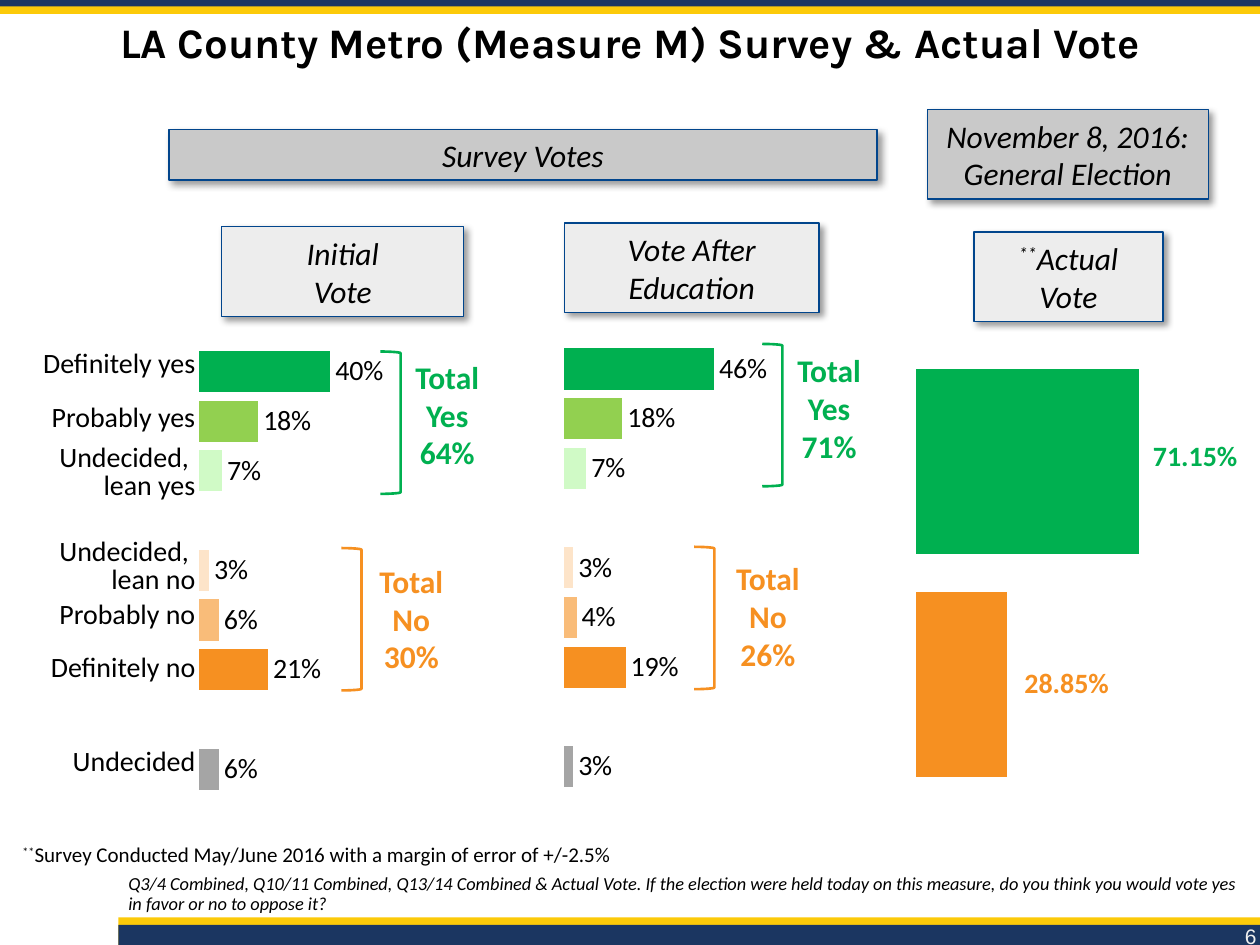
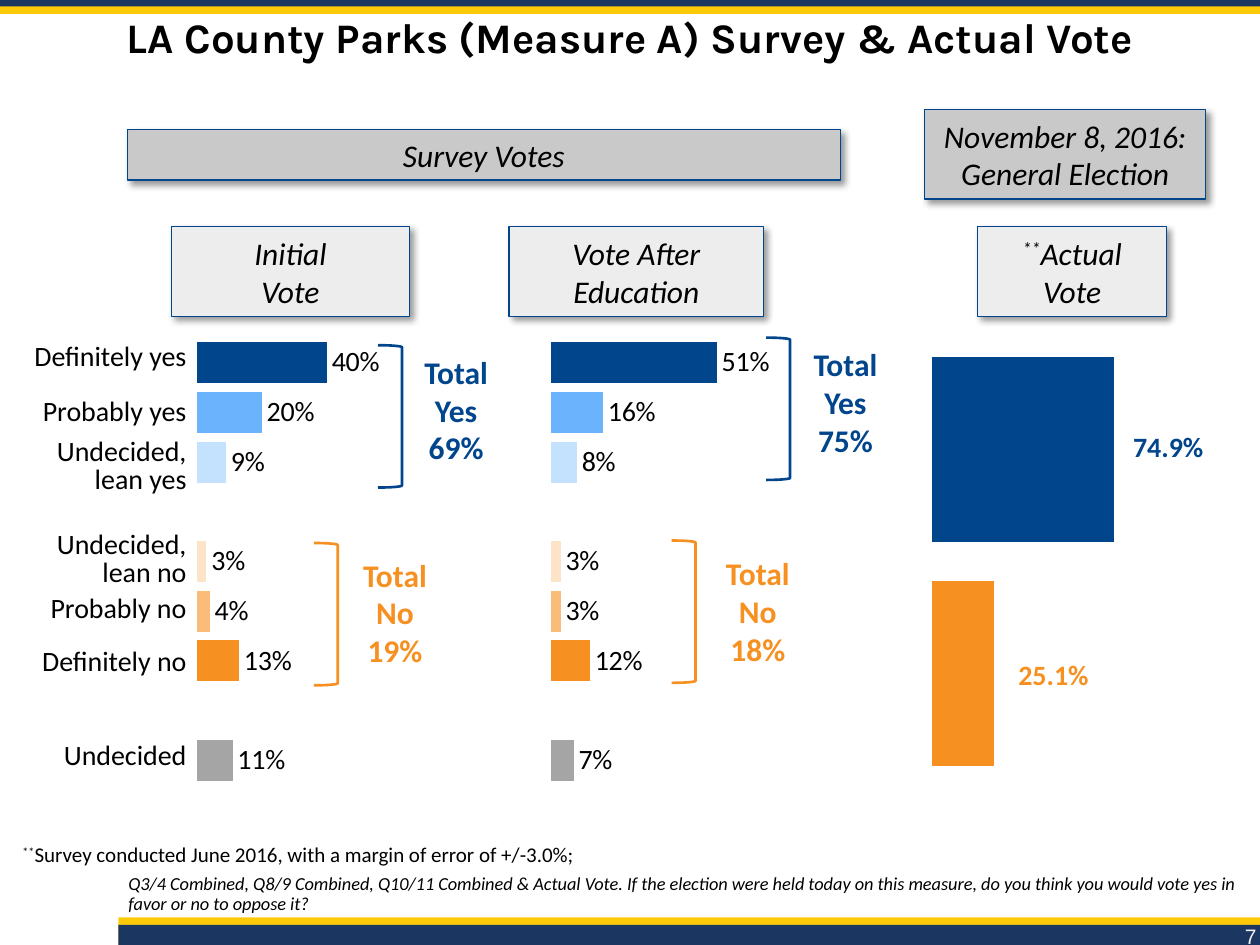
import pptx
import pptx.chart.data
import pptx.dml.color
import pptx.enum.chart
import pptx.enum.shapes
import pptx.enum.text
import pptx.oxml
import pptx.oxml.ns
import pptx.util
from lxml import etree

Inches = pptx.util.Inches
Pt = pptx.util.Pt
SHAPE = pptx.enum.shapes.MSO_SHAPE
ALIGN = pptx.enum.text.PP_ALIGN
ANCHOR = pptx.enum.text.MSO_ANCHOR

NAVY, GOLD, BLUE, GREEN, ORANGE = "1B3661", "FCCA09", "01458C", "00B050", "F69021"
BLACK, DARK_GRAY, LIGHT_GRAY, PAGE_GRAY = "000000", "C9C9C9", "EDEDED", "EFEFEF"
GREENS = [GREEN, "92D050", "D0FAC6"]
BLUES = [BLUE, "6CB3FD", "C4E1FE"]
NO_COLORS = ["FDE4C9", "F9BC79", ORANGE]
UNDECIDED_COLOR = "A5A5A5"

ANSWER_ROWS = [0.23, 0.43, 0.54, 0.29, 0.45, 0.28, 0.42, 0.29, 0.46]
CHART_HEIGHT = 4.04
BRACKET_HEIGHT = 1.13
TOTAL_HEIGHT = 1.01
HEADING_HEIGHT = 0.71


def color(hex_string):
    return pptx.dml.color.RGBColor.from_string(hex_string)


def inches(*lengths):
    return [Inches(length) for length in lengths]


class Deck:
    """Holds the presentation, its style and the slide being filled."""

    def __init__(self):
        self.prs = pptx.Presentation()
        self.prs.slide_width, self.prs.slide_height = inches(10, 7.5)
        self.s = None

    def new_slide(self, title, title_top, question, page):
        self.s = self.prs.slides.add_slide(self.prs.slide_layouts[6])
        self.band(0.94, 7.28, 9.06, 0.22, GOLD)
        self.band(0.94, 7.34, 9.06, 0.16, NAVY)
        self.text((9.08, 7.15, 0.99, 0.43), page, 12, PAGE_GRAY, font="Arial",
                  align=ALIGN.RIGHT, anchor=ANCHOR.BOTTOM)
        self.band(0, 0, 10, 0.11, GOLD)
        self.band(0, 0, 10, 0.05, NAVY)
        self.text((0, title_top, 10, 1.25), title, 24, font="Karla", bold=True,
                  align=ALIGN.CENTER, spacing=0.9)
        self.text((0.92, 6.71, 9.08, 0.6), question, 10.5, italic=True,
                  anchor=ANCHOR.BOTTOM, spacing=0.9)

    def set_text(self, tf, text, size, ink=BLACK, font="Calibri", bold=False,
                 italic=False, align=ALIGN.LEFT, spacing=None):
        """Fill a frame's paragraph; a leading ** is raised, a newline breaks the line."""
        p = tf.paragraphs[0]
        p.alignment = align
        if spacing:
            p.line_spacing = spacing
        f = p.font
        f.size, f.name, f.bold, f.italic = Pt(size), font, bold, italic
        f.color.rgb = color(ink)
        if text.startswith("**"):
            r = p.add_run()
            r.text = "**"
            r._r.get_or_add_rPr().set("baseline", "30000")
            text = text[2:]
        for i, line in enumerate(text.split("\n")):
            if i:
                p.add_line_break()
            if line:
                p.add_run().text = line

    def text(self, box, text, size, ink=BLACK, anchor=ANCHOR.TOP, **style):
        tf = self.s.shapes.add_textbox(*inches(*box)).text_frame
        tf.word_wrap = True
        tf.vertical_anchor = anchor
        self.set_text(tf, text, size, ink, **style)

    def shape(self, kind, box, fill=None, line=None, width=0.75):
        sp = self.s.shapes.add_shape(kind, *inches(*box))
        sp.shadow.inherit = False
        if fill:
            sp.fill.solid()
            sp.fill.fore_color.rgb = color(fill)
        else:
            sp.fill.background()
        if line:
            sp.line.color.rgb = color(line)
            sp.line.width = Pt(width)
        else:
            sp.line.fill.background()
        return sp

    def band(self, left, top, width, height, fill):
        self.shape(SHAPE.RECTANGLE, (left, top, width, height), fill)

    def heading(self, box, text, fill=LIGHT_GRAY):
        sp = self.shape(SHAPE.RECTANGLE, box, fill, BLUE)
        effects = sp._element.spPr.find(pptx.oxml.ns.qn("a:effectLst"))
        effects.append(pptx.oxml.parse_xml(
            f'<a:outerShdw {pptx.oxml.ns.nsdecls("a")} blurRad="{Pt(4)}" dist="{Pt(3)}" '
            'dir="2700000" algn="tl" rotWithShape="0">'
            '<a:srgbClr val="000000"><a:alpha val="40000"/></a:srgbClr></a:outerShdw>'))
        tf = sp.text_frame
        tf.word_wrap = True
        tf.vertical_anchor = ANCHOR.MIDDLE
        self.set_text(tf, text, 18, italic=True, align=ALIGN.CENTER)

    def total(self, bracket, label, label_width, text, ink):
        """Bracket as (left, top, width) and label as (left, top)."""
        self.text((*label, label_width, TOTAL_HEIGHT), text, 18, ink, bold=True,
                  align=ALIGN.CENTER)
        self.shape(SHAPE.RIGHT_BRACKET, (*bracket, BRACKET_HEIGHT), line=ink, width=1.5)

    def table(self, left, top, width, rows, texts, anchor, **style):
        """One column of unfilled, right-aligned cells."""
        frame = self.s.shapes.add_table(len(rows), 1, *inches(left, top, width, sum(rows)))
        table = frame.table
        table.first_row = table.horz_banding = False
        for i, (height, text) in enumerate(zip(rows, texts)):
            table.rows[i].height = Inches(height)
            cell = table.cell(i, 0)
            cell.fill.background()
            cell.margin_left = cell.margin_right = cell.margin_top = Inches(0.01)
            cell.margin_bottom = 0
            cell.vertical_anchor = anchor
            self.set_text(cell.text_frame, text, 16, align=ALIGN.RIGHT, **style)

    def bars(self, left, top, width, values, colors, scale, plot, labels=True):
        """Bar chart; scale is (maximum, major unit), plot the inner (x, width)."""
        data = pptx.chart.data.CategoryChartData(number_format="0%" if labels else "General")
        data.categories = [str(i + 1) for i in range(len(values))]
        data.add_series("Series 1", values)
        chart = self.s.shapes.add_chart(
            pptx.enum.chart.XL_CHART_TYPE.BAR_CLUSTERED,
            *inches(left, top, width, CHART_HEIGHT), data).chart
        chart.has_legend = chart.has_title = False
        chart.font.size, chart.font.name = Pt(10), "Calibri"
        chart.font.color.rgb = color(BLACK)

        cat, val = chart.category_axis, chart.value_axis
        cat.reverse_order = True
        cat.tick_label_position = pptx.enum.chart.XL_TICK_LABEL_POSITION.NONE
        cat.major_tick_mark = pptx.enum.chart.XL_TICK_MARK.NONE
        cat.format.line.fill.background()
        val.visible = val.has_major_gridlines = False
        val.minimum_scale = 0
        val.maximum_scale, val.major_unit = scale

        bar_plot = chart.plots[0]
        bar_plot.gap_width = 21
        bar_plot.vary_by_categories = False
        series = bar_plot.series[0]
        series.format.fill.solid()
        series.format.fill.fore_color.rgb = color(BLUE)
        for i, bar_color in enumerate(colors):
            if bar_color:
                fill = series.points[i].format.fill
                fill.solid()
                fill.fore_color.rgb = color(bar_color)
        if labels:
            dl = series.data_labels
            dl.show_value = True
            dl.number_format, dl.number_format_is_linked = "0%", False
            dl.position = pptx.enum.chart.XL_LABEL_POSITION.OUTSIDE_END
            dl.font.size, dl.font.name = Pt(16), "Calibri"
            dl.font.color.rgb = color(BLACK)
        self.place_plot(chart, plot)

    def place_plot(self, chart, plot):
        area = chart._chartSpace.chart.plotArea
        qn = pptx.oxml.ns.qn
        for old in area.findall(qn("c:layout")):
            area.remove(old)
        layout = etree.Element(qn("c:layout"))
        manual = etree.SubElement(layout, qn("c:manualLayout"))
        x, width = plot
        settings = {"layoutTarget": "inner", "xMode": "edge", "yMode": "edge",
                    "x": x, "y": 0.045, "w": width, "h": 0.879}
        for tag, value in settings.items():
            etree.SubElement(manual, qn("c:" + tag)).set("val", str(value))
        area.insert(0, layout)


def answers(gap):
    return ["Definitely yes", "Probably yes", f"Undecided,{gap}\nlean yes", "",
            f"Undecided,{gap}\nlean no", "Probably no", "Definitely no", "", "Undecided"]


def build_slide(deck, survey):
    deck.new_slide(survey["title"], survey["title_top"], survey["question"], survey["page"])
    yes_colors = survey["yes_colors"]
    colors = [*yes_colors, None, *NO_COLORS, None, UNDECIDED_COLOR]
    deck.table(*survey["answers_at"], ANSWER_ROWS, answers(survey["gap"]),
               ANCHOR.BOTTOM, spacing=Pt(16))
    for vote in survey["votes"]:
        deck.bars(*vote["chart"], vote["values"], colors, (1, 0.25), (0.046, 0.903))
        width = survey["bracket_width"]
        for answer, label_width, ink in (("Yes", 1.08, yes_colors[0]), ("No", 0.97, ORANGE)):
            bracket, label, percent = vote[answer]
            deck.total((*bracket, width), label, label_width,
                       f"Total {answer}\n{percent}", ink)
        deck.heading((*vote["heading_at"], HEADING_HEIGHT), vote["heading"])

    actual = survey["actual"]
    deck.heading((*actual["heading_at"], 1.5, HEADING_HEIGHT), "**Actual\nVote")
    deck.text((0.08, 6.63, 9.83, 0.3), survey["note"], 12)
    result_colors = [yes_colors[0], ORANGE]
    deck.bars(*actual["chart"], actual["values"], result_colors, actual["scale"],
              actual["plot"], labels=False)
    for (left, top, percent), ink in zip(actual["results"], result_colors):
        deck.table(left, top, 0.69, [0.28], [percent], ANCHOR.MIDDLE, ink=ink, bold=True)
    left, width = survey["survey_heading"]
    deck.heading((left, 1.03, width, 0.4), "Survey Votes", DARK_GRAY)
    deck.heading((actual["election_left"], 0.87, 2.23, HEADING_HEIGHT),
                 "November 8, 2016: General Election", DARK_GRAY)


QUESTION = ("{} Combined & Actual Vote. If the election were held today on this measure, "
            "do you think you would vote yes in favor or no to oppose it?")

METRO = dict(
    title="LA County Metro (Measure M) Survey & Actual Vote", title_top=0.13, page="6",
    question=QUESTION.format("Q3/4 Combined, Q10/11 Combined, Q13/14"),
    note="**Survey Conducted May/June 2016 with a margin of error of +/-2.5%",
    yes_colors=GREENS, answers_at=(-0.04, 2.79, 1.6), gap=" ", bracket_width=0.16,
    survey_heading=(1.34, 5.62),
    votes=[
        dict(heading="Initial\nVote", heading_at=(1.76, 1.8, 1.92), chart=(1.45, 2.57, 2.88),
             values=[0.4, 0.18, 0.07, None, 0.03, 0.06, 0.21, None, 0.06],
             Yes=((3.02, 2.79), (3.01, 2.79), "64%"),
             No=((2.71, 4.35), (2.78, 4.41), "30%")),
        dict(heading="Vote After Education", heading_at=(4.48, 1.77, 2.02),
             chart=(4.34, 2.55, 2.88),
             values=[0.46, 0.18, 0.07, None, 0.03, 0.04, 0.19, None, 0.03],
             Yes=((6.05, 2.73), (6.04, 2.74), "71%"),
             No=((5.51, 4.34), (5.61, 4.39), "26%")),
    ],
    actual=dict(heading_at=(7.73, 1.84), election_left=7.36, chart=(6.96, 2.59, 3.04),
                values=[100, 41], scale=(141, 35), plot=(0.101, 0.821),
                results=[(9.14, 3.48, "71.15%"), (8.12, 5.28, "28.85%")]),
)

PARKS = dict(
    title="LA County Parks (Measure A) Survey & Actual Vote", title_top=0.09, page="7",
    question=QUESTION.format("Q3/4 Combined, Q8/9 Combined, Q10/11"),
    note="**Survey conducted June 2016, with a margin of error of +/-3.0%;",
    yes_colors=BLUES, answers_at=(-0.08, 2.74, 1.57), gap="", bracket_width=0.19,
    survey_heading=(1.01, 5.66),
    votes=[
        dict(heading="Initial\nVote", heading_at=(1.36, 1.8, 1.89), chart=(1.43, 2.5, 2.86),
             values=[0.4, 0.2, 0.09, None, 0.03, 0.04, 0.13, None, 0.11],
             Yes=((3, 2.74), (3.08, 2.75), "69%"),
             No=((2.49, 4.31), (2.65, 4.36), "19%")),
        dict(heading="Vote After Education", heading_at=(4.04, 1.8, 2.02),
             chart=(4.24, 2.5, 2.86),
             values=[0.51, 0.16, 0.08, None, 0.03, 0.03, 0.12, None, 0.07],
             Yes=((6.08, 2.68), (6.17, 2.69), "75%"),
             No=((5.33, 4.29), (5.53, 4.35), "18%")),
    ],
    actual=dict(heading_at=(7.76, 1.8), election_left=7.34, chart=(7.16, 2.5, 2.77),
                values=[100, 34], scale=(134, 33), plot=(0.087, 0.698),
                results=[(8.87, 3.41, "74.9%"), (7.96, 5.22, "25.1%")]),
)


def main():
    deck = Deck()
    for survey in (METRO, PARKS):
        build_slide(deck, survey)
    deck.prs.save("out.pptx")


if __name__ == "__main__":
    main()
